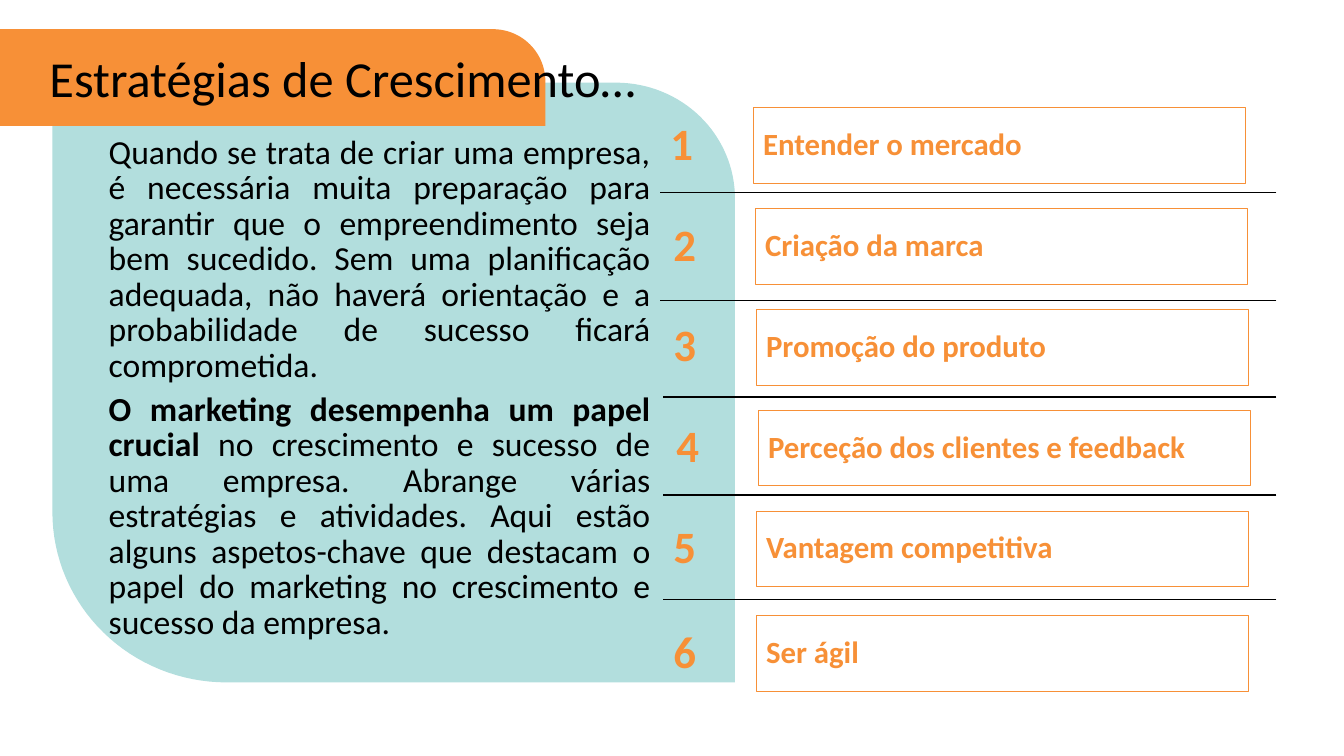
from math import cos, pi, sin

from lxml.etree import SubElement
from pptx import Presentation
from pptx.dml.color import RGBColor
from pptx.enum.shapes import MSO_CONNECTOR, MSO_SHAPE
from pptx.enum.text import MSO_ANCHOR, MSO_AUTO_SIZE, PP_ALIGN
from pptx.oxml.ns import qn
from pptx.util import Inches, Pt

COLORS = {"orange": "F79037", "teal": "B2DEDD", "black": "000000"}
FONT = "Calibri"

STRATEGIES = [
    ("Entender o mercado", 6.55, 7.47, 1.07),
    ("Criação da marca", 6.58, 7.49, 2.07),
    ("Promoção do produto", 6.58, 7.5, 3.07),
    ("Perceção dos clientes e feedback", 6.61, 7.52, 4.07),
    ("Vantagem competitiva", 6.58, 7.5, 5.07),
    ("Ser ágil", 6.58, 7.5, 6.11),
]
SEPARATORS = [(6.55, 1.91), (6.55, 2.98), (6.58, 3.94), (6.58, 4.91), (6.58, 5.95)]

INTRODUCTION = [
    [
        (
            "Quando se trata de criar uma empresa, é necessária muita preparação "
            "para garantir que o empreendimento seja bem sucedido. Sem uma "
            "planificação adequada, não haverá orientação e a probabilidade de "
            "sucesso ficará comprometida.",
            False,
        )
    ],
    [
        ("O marketing desempenha um papel crucial ", True),
        (
            "no crescimento e sucesso de uma empresa. Abrange várias estratégias "
            "e atividades. Aqui estão alguns aspetos-chave que destacam o papel "
            "do marketing no crescimento e sucesso da empresa.",
            False,
        ),
    ],
]


def color(name):
    return RGBColor.from_string(COLORS[name])


def write(shape, paragraphs, size, ink="black", align=PP_ALIGN.LEFT,
          anchor=MSO_ANCHOR.MIDDLE, spacing=0.9, before=0):
    frame = shape.text_frame
    frame.word_wrap = True
    frame.auto_size = MSO_AUTO_SIZE.NONE
    frame.vertical_anchor = anchor
    for index, runs in enumerate(paragraphs):
        paragraph = frame.paragraphs[0] if index == 0 else frame.add_paragraph()
        paragraph.alignment = align
        paragraph.line_spacing = spacing
        paragraph.space_before = Pt(before)
        for text, bold in runs:
            run = paragraph.add_run()
            run.text = text
            run.font.name = FONT
            run.font.size = Pt(size)
            run.font.bold = bold
            run.font.color.rgb = color(ink)


def add_text(slide, left, top, width, height, paragraphs, **style):
    box = slide.shapes.add_textbox(
        Inches(left), Inches(top), Inches(width), Inches(height))
    write(box, paragraphs, **style)


def add_framed_label(slide, left, top, text):
    label = slide.shapes.add_shape(
        MSO_SHAPE.RECTANGLE, Inches(left), Inches(top), Inches(4.88), Inches(0.75))
    label.shadow.inherit = False
    label.fill.background()
    label.line.color.rgb = color("orange")
    label.line.width = Pt(0.75)
    write(label, [[(text, True)]], size=22, ink="orange")


def add_separator(slide, left, top):
    line = slide.shapes.add_connector(
        MSO_CONNECTOR.STRAIGHT, Inches(12.66), Inches(top), Inches(left), Inches(top))
    line.line.color.rgb = color("black")
    line.line.width = Pt(1)
    SubElement(line._element.spPr, qn("a:effectLst"))


def corner(center_x, center_y, radius_x, radius_y, start, steps=32):
    angles = [start + pi / 2 * step / steps for step in range(steps + 1)]
    return [(center_x + radius_x * cos(angle), center_y + radius_y * sin(angle))
            for angle in angles]


def add_panel(slide, points, fill):
    vertices = [(Inches(x), Inches(y)) for x, y in points]
    builder = slide.shapes.build_freeform(*vertices[0])
    builder.add_line_segments(vertices[1:], close=True)
    panel = builder.convert_to_shape()
    panel.shadow.inherit = False
    panel.fill.solid()
    panel.fill.fore_color.rgb = color(fill)
    panel.line.fill.background()


def place_title(slide, text):
    title = slide.shapes.title
    title.left, title.top = Inches(0.39), Inches(0.41)
    title.width, title.height = Inches(6.27), Inches(0.79)
    write(title, [[(text, False)]], size=36)
    slide.shapes._spTree.append(title._element)


def main():
    presentation = Presentation()
    presentation.slide_width = Inches(13.33)
    presentation.slide_height = Inches(7.5)
    slide = presentation.slides.add_slide(presentation.slide_layouts[5])

    teal_outline = (corner(2.25, 5.08, 1.73, 1.69, pi / 2) + [(0.52, 0.82)]
                    + corner(6.11, 1.97, 1.18, 1.15, -pi / 2) + [(7.29, 6.77)])
    orange_outline = ([(-0.02, 0.29)] + corner(4.89, 0.81, 0.52, 0.52, -pi / 2)
                      + [(5.41, 1.25), (0, 1.25), (0, 0.48), (-0.01, 0.37)])
    add_panel(slide, teal_outline, "teal")
    add_panel(slide, orange_outline, "orange")

    for left, top in SEPARATORS:
        add_separator(slide, left, top)
    add_text(slide, 0.98, 1.3, 5.57, 5.58, INTRODUCTION, size=24,
             align=PP_ALIGN.JUSTIFY, anchor=MSO_ANCHOR.TOP, spacing=0.88, before=6)
    for number, (text, number_left, label_left, top) in enumerate(STRATEGIES, 1):
        add_text(slide, number_left, top, 0.77, 0.75, [[(str(number), True)]],
                 size=32, ink="orange")
        add_framed_label(slide, label_left, top, text)
    place_title(slide, "Estratégias de Crescimento…")

    presentation.save("out.pptx")


if __name__ == "__main__":
    main()
